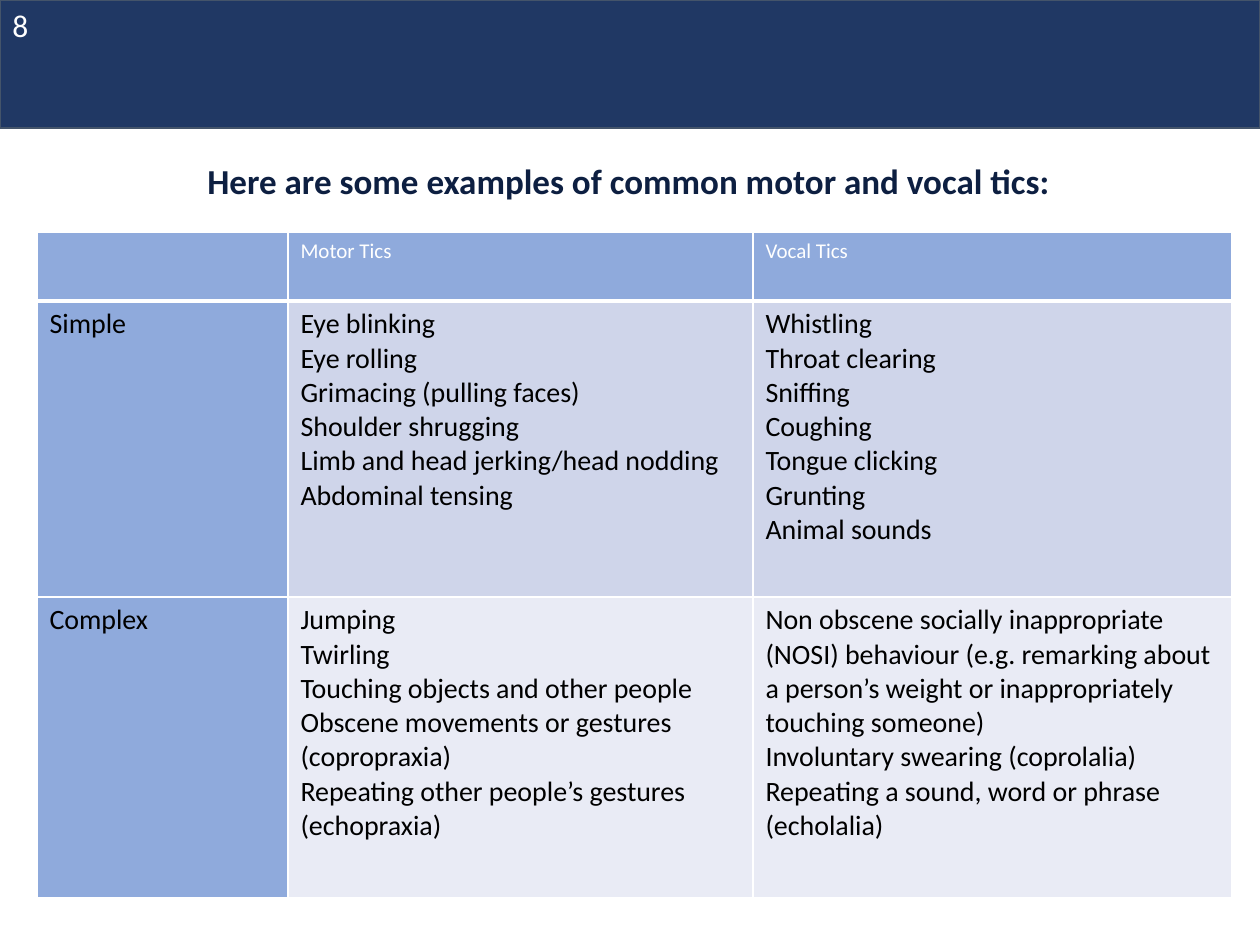
from dataclasses import dataclass

from lxml.etree import SubElement
from pptx import Presentation
from pptx.dml.color import RGBColor
from pptx.enum.shapes import MSO_SHAPE as Shape
from pptx.enum.text import MSO_ANCHOR as Anchor, PP_ALIGN as Align
from pptx.oxml.ns import qn
from pptx.util import Emu, Pt

EMU_PER_PX = 914400 / 126
FONT = "Calibri"
WHITE, BLACK, NAVY, INK = "FFFFFF", "000000", "203864", "0D1F41"
BLUE, BAND_DARK, BAND_LIGHT = "8FAADC", "CFD5EA", "E9EBF5"
COLUMN_WIDTHS = (251, 465, 479)


@dataclass
class TicRow:
    height: int
    label: str
    motor: str
    vocal: str
    fill: str
    text_color: str = BLACK
    size: int = 16
    bottom_border: int = 1


TIC_ROWS = [
    TicRow(69, "", "Motor Tics", "Vocal Tics", BLUE, WHITE, 12, 3),
    TicRow(
        296,
        "Simple",
        "Eye blinking\nEye rolling\nGrimacing (pulling faces)\nShoulder shrugging\n"
        "Limb and head jerking/head nodding\nAbdominal tensing",
        "Whistling\nThroat clearing\nSniffing\nCoughing\nTongue clicking\n"
        "Grunting\nAnimal sounds",
        BAND_DARK,
    ),
    TicRow(
        301,
        "Complex",
        "Jumping\nTwirling\nTouching objects and other people\n"
        "Obscene movements or gestures (copropraxia)\n"
        "Repeating other people’s gestures (echopraxia)",
        "Non obscene socially inappropriate (NOSI) behaviour (e.g. remarking about "
        "a person’s weight or inappropriately touching someone)\n"
        "Involuntary swearing (coprolalia)\n"
        "Repeating a sound, word or phrase (echolalia)",
        BAND_LIGHT,
    ),
]


def px(length: int) -> Emu:
    return Emu(round(length * EMU_PER_PX))


def rgb(color: str) -> RGBColor:
    return RGBColor.from_string(color)


def write(paragraph, text: str, size: int, color: str, bold: bool = False) -> None:
    """Fill a paragraph; newlines become line breaks of the same size."""
    paragraph.text = text.replace("\n", "\v")
    for run in paragraph.runs:
        run.font.name = FONT
        run.font.size = Pt(size)
        run.font.bold = bold
        run.font.color.rgb = rgb(color)
    for line_break in paragraph._p.findall(qn("a:br")):
        SubElement(line_break, qn("a:rPr"), sz=str(size * 100))


def set_borders(cell, bottom: int) -> None:
    properties = cell._tc.get_or_add_tcPr()
    for position, (side, width) in enumerate(
        (("lnL", 1), ("lnR", 1), ("lnT", 1), ("lnB", bottom))
    ):
        line = SubElement(properties, qn(f"a:{side}"), w=str(Pt(width)))
        line_fill = SubElement(line, qn("a:solidFill"))
        SubElement(line_fill, qn("a:srgbClr"), val=WHITE)
        properties.insert(position, line)  # borders precede the cell fill


def add_banner(slide) -> None:
    banner = slide.shapes.add_shape(Shape.RECTANGLE, 0, 0, px(1260), px(128))
    banner.shadow.inherit = False
    banner.fill.solid()
    banner.fill.fore_color.rgb = rgb(NAVY)
    banner.line.color.rgb = rgb("44546A")
    banner.line.width = Pt(1)


def add_title(slide, text: str) -> None:
    title = slide.shapes.title
    title.left, title.top, title.width, title.height = map(px, (63, 154, 1131, 58))
    title.text_frame.vertical_anchor = Anchor.MIDDLE
    heading = title.text_frame.paragraphs[0]
    write(heading, text, 20, INK, bold=True)
    heading.alignment = Align.CENTER
    heading.line_spacing = 0.9


def add_tic_table(slide, rows: list[TicRow]) -> None:
    table = slide.shapes.add_table(
        len(rows), len(COLUMN_WIDTHS), px(37), px(232),
        px(sum(COLUMN_WIDTHS)), px(sum(row.height for row in rows)),
    ).table
    for column, width in zip(table.columns, COLUMN_WIDTHS):
        column.width = px(width)
    for table_row, row in zip(table.rows, rows):
        table_row.height = px(row.height)
        fills = (BLUE, row.fill, row.fill)
        for cell, text, fill in zip(
            table_row.cells, (row.label, row.motor, row.vocal), fills
        ):
            cell.fill.solid()
            cell.fill.fore_color.rgb = rgb(fill)
            set_borders(cell, row.bottom_border)
            if text:
                write(cell.text_frame.paragraphs[0], text, row.size, row.text_color)


def add_page_number(slide, number: str) -> None:
    box = slide.shapes.add_textbox(0, 0, px(37), px(50))
    box.text_frame.word_wrap = False
    write(box.text_frame.paragraphs[0], number, 18, WHITE)


def main() -> None:
    presentation = Presentation()
    presentation.slide_width, presentation.slide_height = px(1260), px(945)
    slide = presentation.slides.add_slide(presentation.slide_layouts[5])
    add_banner(slide)
    add_title(slide, "Here are some examples of common motor and vocal tics:")
    add_tic_table(slide, TIC_ROWS)
    add_page_number(slide, "8")
    presentation.save("out.pptx")


if __name__ == "__main__":
    main()
